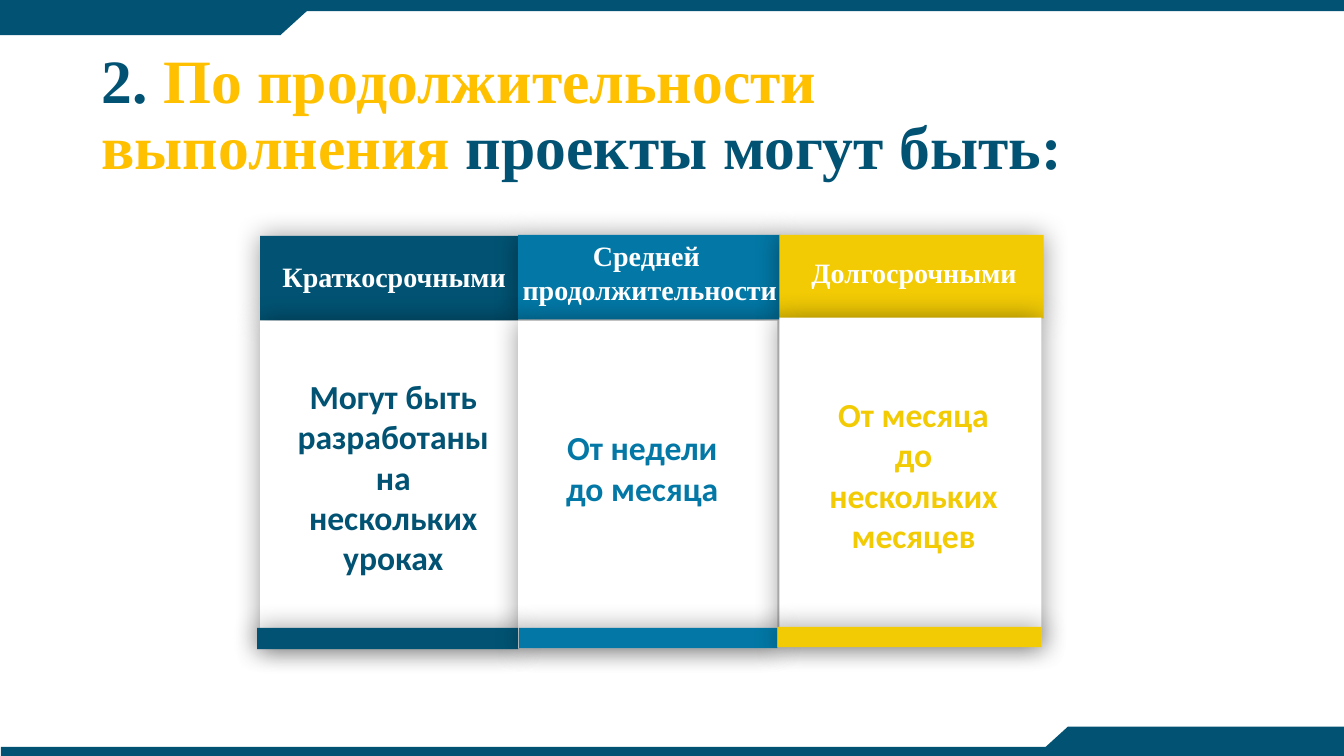
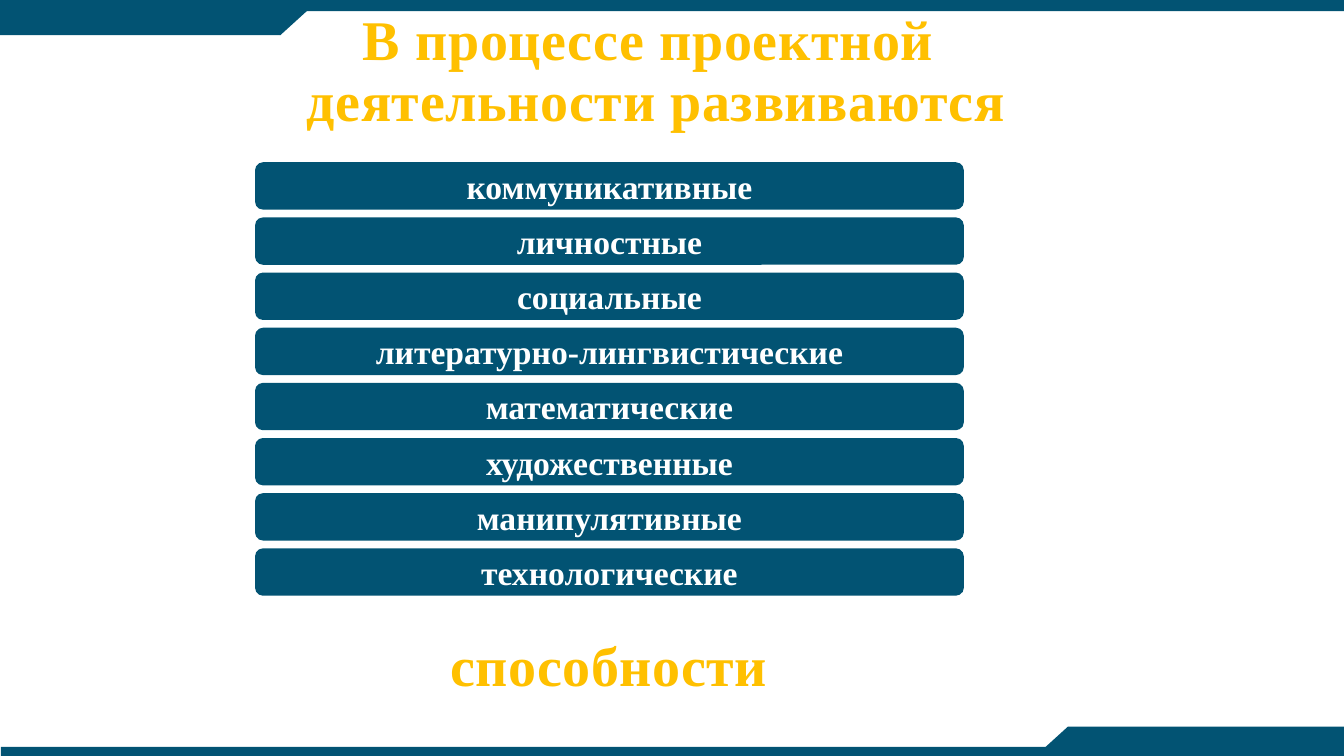
from lxml import etree
from pptx import Presentation
from pptx.dml.color import RGBColor
from pptx.enum.shapes import MSO_SHAPE
from pptx.enum.text import MSO_ANCHOR, PP_ALIGN
from pptx.oxml.ns import qn
from pptx.util import Inches, Pt

RECT = MSO_SHAPE.RECTANGLE
ROUND = MSO_SHAPE.ROUNDED_RECTANGLE
MERGE = MSO_SHAPE.FLOWCHART_MERGE
LEFT, CENTER = PP_ALIGN.LEFT, PP_ALIGN.CENTER
TOP, MIDDLE = MSO_ANCHOR.TOP, MSO_ANCHOR.MIDDLE

WIDTH, HEIGHT = 13.33, 7.5
COLORS = {"navy": "025373", "blue": "0378A6", "yellow": "F2CB05",
          "gold": "FFC000", "white": "FFFFFF", "black": "000000"}
SERIF, SANS = "Times New Roman", "Calibri"

BANDS = [
    (RECT, (0, 0, WIDTH, 0.11), 0),
    (RECT, (0.01, 7.41, WIDTH, 0.11), 0),
    (RECT, (0, 0.05, 2.78, 0.3), 0),
    (MERGE, (2.45, 0.05, 0.66, 0.3), 0),
    (RECT, (10.59, 7.21, 2.78, 0.3), 0),
    (MERGE, (10.26, 7.21, 0.66, 0.3), 180),
]

TITLE_FORMAT = {"name": SERIF, "size": Pt(44), "bold": True}
CAPTION_FORMAT = {"name": SERIF, "size": Pt(40), "bold": True}
HEADER_FORMAT = {"name": SERIF, "size": Pt(20), "bold": True}
BODY_FORMAT = {"name": SANS, "size": Pt(24), "bold": True}
ABILITY_FORMAT = {"name": SERIF, "size": Pt(24), "bold": True}

DURATION_TITLE = [("2. ", "navy"), ("По продолжительности выполнения ", "gold"),
                  ("проекты могут быть:", "navy")]
DURATIONS = [
    {"color": "navy",
     "header": (2.58, 2.34, 2.56, 0.84),
     "body": (2.58, 3.18, 2.56, 3.25),
     "foot": (2.55, 6.23, 2.59, 0.21),
     "name": ["Краткосрочными"], "name_at": (2.68, 2.53, 2.46, 0.44),
     "text": "Могут быть разработаны на нескольких уроках",
     "text_at": (2.84, 3.68, 2.12, 2.12)},
    {"color": "blue",
     "header": (5.14, 2.33, 2.6, 0.84),
     "body": (5.14, 3.18, 2.57, 3.25),
     "foot": (5.15, 6.23, 2.56, 0.2),
     "name": ["Средней ", "продолжительности"], "name_at": (5.04, 2.32, 2.81, 0.77),
     "text": "От недели до месяца",
     "text_at": (5.31, 4.19, 2.12, 0.91)},
    {"color": "yellow",
     "header": (7.73, 2.33, 2.62, 0.83),
     "body": (7.73, 3.15, 2.6, 3.25),
     "foot": (7.71, 6.22, 2.62, 0.2),
     "name": ["Долгосрочными"], "name_at": (7.94, 2.49, 2.25, 0.44),
     "text": "От месяца до нескольких месяцев",
     "text_at": (8, 3.86, 2.12, 1.72)},
]

ABILITY_TITLE = [("В процессе проектной ", "gold"), ("\n", None),
                 ("деятельности развиваются", "gold")]
ABILITIES = ["коммуникативные", "личностные", "социальные",
             "литературно-лингвистические", "математические",
             "художественные", "манипулятивные", "технологические"]
ABILITY_CLOSING = [("способности", "gold")]
ABILITY_LEFT, ABILITY_TOP, ABILITY_WIDTH, ABILITY_HEIGHT = 2.53, 1.61, 7.03, 0.47
ABILITY_STEP = (5.44 - ABILITY_TOP) / (len(ABILITIES) - 1)


def rgb(color):
    return RGBColor.from_string(COLORS[color])


def add_glow(shape, blur=19, opacity=40):
    effects = shape._element.spPr.find(qn("a:effectLst"))
    shadow = etree.SubElement(effects, qn("a:outerShdw"), blurRad=str(Pt(blur)),
                              dist="0", dir="0", algn="ctr", rotWithShape="0")
    tint = etree.SubElement(shadow, qn("a:srgbClr"), val=COLORS["black"])
    etree.SubElement(tint, qn("a:alpha"), val=str(opacity * 1000))


def add_block(page, kind, at, color, rotation=0, glow=False):
    shape = page.shapes.add_shape(kind, *map(Inches, at))
    shape.shadow.inherit = False
    shape.fill.solid()
    shape.fill.fore_color.rgb = rgb(color)
    shape.line.fill.background()
    shape.rotation = rotation
    if glow:
        add_glow(shape)
    return shape


def write(shape, paragraphs, style, align=CENTER, anchor=TOP, wrap=True,
          line_spacing=None, tracking=None):
    frame = shape.text_frame
    frame.word_wrap = wrap
    frame.vertical_anchor = anchor
    for index, spans in enumerate(paragraphs):
        para = frame.add_paragraph() if index else frame.paragraphs[0]
        para.alignment = align
        para.line_spacing = line_spacing
        for text, color in spans:
            if text == "\n":
                para.add_line_break()
                continue
            span = para.add_run()
            span.text = text
            for key, value in style.items():
                setattr(span.font, key, value)
            span.font.color.rgb = rgb(color)
            if tracking:
                span._r.get_or_add_rPr().set("spc", str(int(tracking * 100)))


def add_text(page, at, paragraphs, style, **layout):
    box = page.shapes.add_textbox(*map(Inches, at))
    write(box, paragraphs, style, **layout)


def add_title(page, at, spans, style, **layout):
    add_text(page, at, [spans], style, anchor=MIDDLE, line_spacing=0.9, **layout)


def add_page(deck):
    page = deck.slides.add_slide(deck.slide_layouts[6])
    for kind, at, rotation in BANDS:
        add_block(page, kind, at, "navy", rotation)
    return page


def build_durations(deck):
    page = add_page(deck)
    add_title(page, (0.91, 0.43, 10.54, 1.45), DURATION_TITLE, TITLE_FORMAT, align=LEFT)
    for part in ("header", "body", "foot"):
        for item in DURATIONS:
            color = "white" if part == "body" else item["color"]
            add_block(page, RECT, item[part], color, glow=True)
    for item in DURATIONS:
        names = [[(line, "white")] for line in item["name"]]
        add_text(page, item["name_at"], names, HEADER_FORMAT, wrap=False)
        add_text(page, item["text_at"], [[(item["text"], item["color"])]], BODY_FORMAT)


def build_abilities(deck):
    page = add_page(deck)
    add_title(page, (0.76, 0, 11.5, 1.45), ABILITY_TITLE, CAPTION_FORMAT, tracking=0.5)
    for row, ability in enumerate(ABILITIES):
        at = (ABILITY_LEFT, ABILITY_TOP + row * ABILITY_STEP, ABILITY_WIDTH, ABILITY_HEIGHT)
        bar = add_block(page, ROUND, at, "navy")
        write(bar, [[(ability, "white")]], ABILITY_FORMAT, anchor=MIDDLE)
    add_title(page, (0.29, 5.91, 11.5, 1.45), ABILITY_CLOSING, CAPTION_FORMAT, tracking=0.5)


def main():
    deck = Presentation()
    deck.slide_width, deck.slide_height = Inches(WIDTH), Inches(HEIGHT)
    build_durations(deck)
    build_abilities(deck)
    deck.save("out.pptx")


if __name__ == "__main__":
    main()
